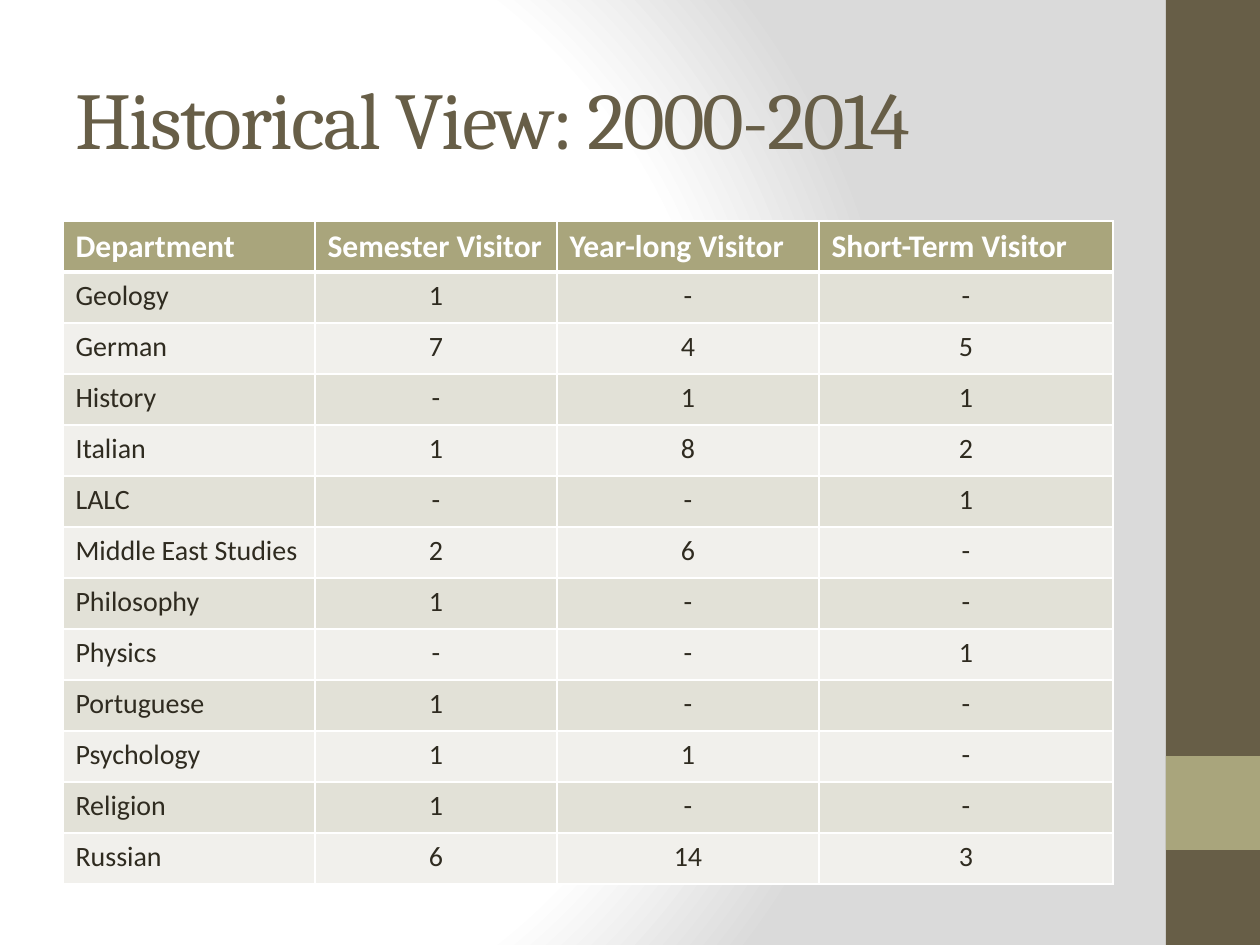
from dataclasses import dataclass

from pptx import Presentation
from pptx.dml.color import RGBColor
from pptx.enum.shapes import MSO_SHAPE as Shape
from pptx.enum.text import MSO_ANCHOR as Anchor, MSO_AUTO_SIZE as AutoSize, PP_ALIGN as Align
from pptx.oxml import parse_xml
from pptx.oxml.ns import nsdecls, qn
from pptx.util import Emu, Pt

PX_PER_INCH = 126


def px(length: int) -> Emu:
    return Emu(round(length * 914400 / PX_PER_INCH))


@dataclass(frozen=True)
class Theme:
    brown: str = "675E47"
    olive: str = "A9A57C"
    ink: str = "2F2B20"
    white: str = "FFFFFF"
    grey: str = "DADADA"
    bands: tuple[str, str] = ("E2E1D7", "F1F0EC")
    heading_font: str = "Cambria"
    body_font: str = "Calibri"
    title_size: int = 46
    header_size: int = 18
    body_size: int = 16
    thin_rule: int = 1
    thick_rule: int = 3


@dataclass(frozen=True)
class Bar:
    left: int
    top: int
    width: int
    height: int
    color: str


THEME = Theme()
SIDE_BARS = [
    Bar(1166, 0, 94, 945, THEME.brown),
    Bar(1166, 756, 94, 94, THEME.olive),
]
LEFT, TABLE_TOP, ROW_HEIGHT = 63, 221, 51
COLUMN_WIDTHS = (252, 242, 262, 294)
HEADERS = ("Department", "Semester Visitor", "Year-long Visitor", "Short-Term Visitor")
VISITORS = [
    ("Geology", "1", "-", "-"),
    ("German", "7", "4", "5"),
    ("History", "-", "1", "1"),
    ("Italian", "1", "8", "2"),
    ("LALC", "-", "-", "1"),
    ("Middle East Studies", "2", "6", "-"),
    ("Philosophy", "1", "-", "-"),
    ("Physics", "-", "-", "1"),
    ("Portuguese", "1", "-", "-"),
    ("Psychology", "1", "1", "-"),
    ("Religion", "1", "-", "-"),
    ("Russian", "6", "14", "3"),
]


def write_text(frame, text: str, *, size: int, color: str, font: str = THEME.body_font,
               bold: bool = False, align: Align = Align.LEFT, spacing: int = 0) -> None:
    paragraph = frame.paragraphs[0]
    paragraph.alignment = align
    run = paragraph.add_run()
    run.text = text
    run.font.name = font
    run.font.size = Pt(size)
    run.font.bold = bold
    run.font.color.rgb = RGBColor.from_string(color)
    if spacing:
        run.font._element.set("spc", str(spacing * 100))


def paint_background(slide) -> None:
    stops = "".join(
        f'<a:gs pos="{percent * 1000}"><a:srgbClr val="{color}"/></a:gs>'
        for percent, color in ((0, THEME.white), (75, THEME.white), (100, THEME.grey))
    )
    background = parse_xml(
        f'<p:bg {nsdecls("p", "a")}><p:bgPr><a:gradFill rotWithShape="1">'
        f'<a:gsLst>{stops}</a:gsLst><a:path path="circle">'
        '<a:fillToRect l="20000" t="50000" r="100000" b="50000"/></a:path>'
        '</a:gradFill><a:effectLst/></p:bgPr></p:bg>'
    )
    slide.element.find(qn("p:cSld")).insert(0, background)


def draw_bar(slide, bar: Bar) -> None:
    block = slide.shapes.add_shape(
        Shape.RECTANGLE, px(bar.left), px(bar.top), px(bar.width), px(bar.height))
    block.shadow.inherit = False
    block.fill.solid()
    block.fill.fore_color.rgb = RGBColor.from_string(bar.color)
    block.line.fill.background()


def draw_title(slide, text: str) -> None:
    title = slide.shapes.title
    title.left, title.top = px(LEFT), px(38)
    title.width, title.height = px(sum(COLUMN_WIDTHS)), px(158)
    frame = title.text_frame
    frame.word_wrap = True
    frame.auto_size = AutoSize.NONE
    frame.vertical_anchor = Anchor.MIDDLE
    write_text(frame, text, size=THEME.title_size, color=THEME.brown,
               font=THEME.heading_font, spacing=-1)


def set_borders(cell, top: int, bottom: int) -> None:
    properties = cell._tc.get_or_add_tcPr()
    widths = {"lnL": THEME.thin_rule, "lnR": THEME.thin_rule, "lnT": top, "lnB": bottom}
    for position, (side, width) in enumerate(widths.items()):
        properties.insert(position, parse_xml(
            f'<a:{side} {nsdecls("a")} w="{Pt(width)}"><a:solidFill>'
            f'<a:srgbClr val="{THEME.white}"/></a:solidFill></a:{side}>'))


def draw_table(slide) -> None:
    rows = [HEADERS, *VISITORS]
    table = slide.shapes.add_table(
        len(rows), len(HEADERS), px(LEFT), px(TABLE_TOP),
        px(sum(COLUMN_WIDTHS)), px(ROW_HEIGHT * len(rows))).table
    table.horz_banding = False
    for column, width in zip(table.columns, COLUMN_WIDTHS):
        column.width = px(width)

    for row_index, values in enumerate(rows):
        table.rows[row_index].height = px(ROW_HEIGHT)
        is_header = row_index == 0
        row_color = THEME.olive if is_header else THEME.bands[(row_index - 1) % 2]
        for column_index, value in enumerate(values):
            cell = table.cell(row_index, column_index)
            cell.fill.solid()
            cell.fill.fore_color.rgb = RGBColor.from_string(row_color)
            set_borders(cell,
                        top=THEME.thick_rule if row_index == 1 else THEME.thin_rule,
                        bottom=THEME.thick_rule if is_header else THEME.thin_rule)
            write_text(cell.text_frame, value,
                       size=THEME.header_size if is_header else THEME.body_size,
                       color=THEME.white if is_header else THEME.ink,
                       bold=is_header,
                       align=Align.LEFT if is_header or column_index == 0 else Align.CENTER)


def main() -> None:
    deck = Presentation()
    deck.slide_width, deck.slide_height = px(1260), px(945)
    slide = deck.slides.add_slide(deck.slide_layouts[5])

    # Background and side bars
    paint_background(slide)
    for bar in SIDE_BARS:
        draw_bar(slide, bar)

    # Title and visitor counts
    draw_title(slide, "Historical View: 2000-2014")
    draw_table(slide)

    deck.save("out.pptx")


if __name__ == "__main__":
    main()
